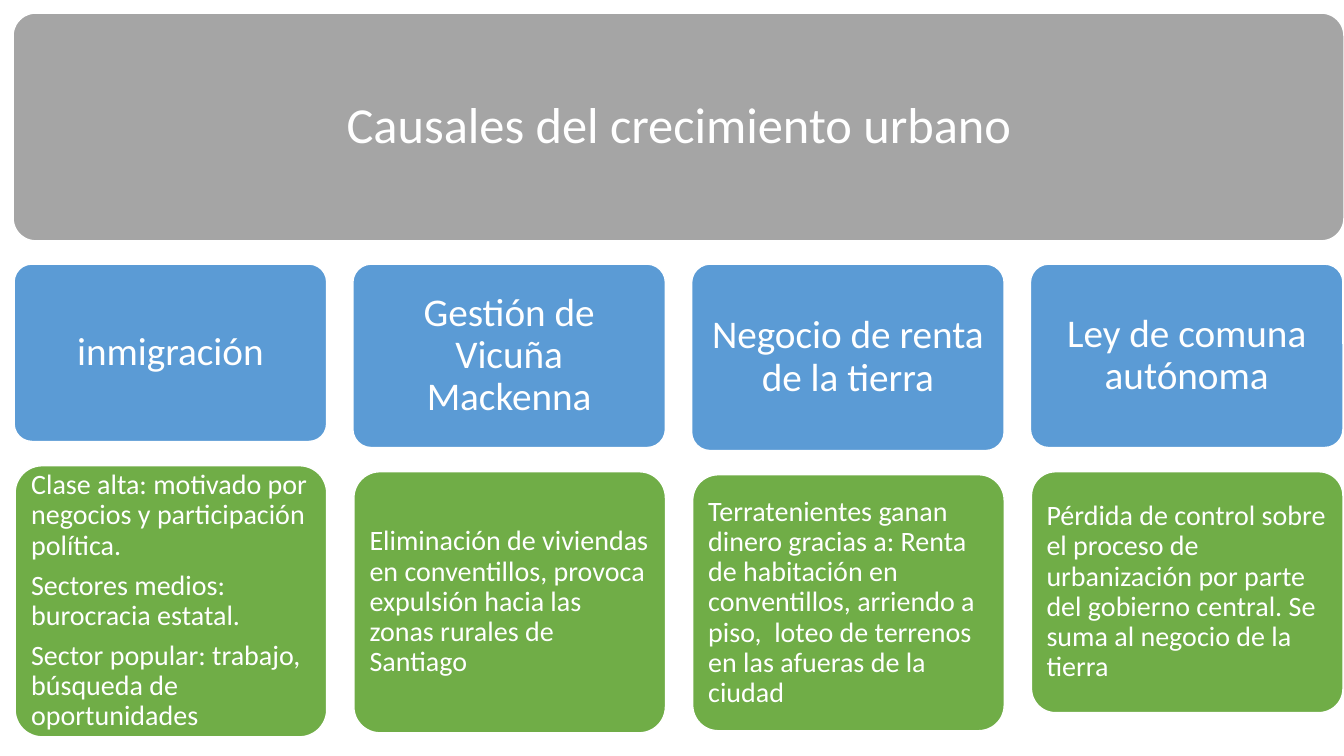
import pptx
import pptx.util
import pptx.dml.color
import pptx.enum.shapes
import pptx.enum.text

PX = 9144
FONT = "Calibri"
WHITE = pptx.dml.color.RGBColor(0xFF, 0xFF, 0xFF)
GRAY = pptx.dml.color.RGBColor(0xA5, 0xA5, 0xA5)
BLUE = pptx.dml.color.RGBColor(0x5B, 0x9B, 0xD5)
GREEN = pptx.dml.color.RGBColor(0x70, 0xAD, 0x47)
LEFT, PITCH, CARD_W = 14, 336, 310
CAUSE_TOP, GAP = 262, 24

TITLE = "Causales del crecimiento urbano"
CAUSES = [
    ("inmigración", 176, 269, [
        "Clase alta: motivado por negocios y participación política.",
        "Sectores medios: burocracia estatal.",
        "Sector popular: trabajo, búsqueda de oportunidades"]),
    ("Gestión de Vicuña Mackenna", 182, 259, [
        "Eliminación de viviendas en conventillos, provoca expulsión "
        "hacia las zonas rurales de Santiago"]),
    ("Negocio de renta de la tierra", 185, 254, [
        "Terratenientes ganan dinero gracias a: Renta de habitación en "
        "conventillos, arriendo a piso,  loteo de terrenos en las afueras "
        "de la ciudad"]),
    ("Ley de comuna autónoma", 182, 239, [
        "Pérdida de control sobre el proceso de urbanización por parte del "
        "gobierno central. Se suma al negocio de la tierra"]),
]


def px(n):
    return pptx.util.Emu(n * PX)


def write(sp, paragraphs, size, align, inset):
    tf = sp.text_frame
    tf.word_wrap = True
    tf.auto_size = pptx.enum.text.MSO_AUTO_SIZE.NONE
    tf.vertical_anchor = pptx.enum.text.MSO_ANCHOR.MIDDLE
    tf.margin_left = tf.margin_right = px(inset)
    tf.margin_top = tf.margin_bottom = px(inset)
    tf.text = "\n".join(paragraphs)
    for p in tf.paragraphs:
        p.alignment = align
        p.line_spacing = 0.9
        p.space_before = pptx.util.Pt(0)
        p.space_after = pptx.util.Pt(size * 0.35)
        p.font.name = FONT
        p.font.size = pptx.util.Pt(size)
        p.font.color.rgb = WHITE


def add_card(s, x, y, w, h, color):
    sp = s.shapes.add_shape(pptx.enum.shapes.MSO_SHAPE.ROUNDED_RECTANGLE,
                            px(x), px(y), px(w), px(h))
    sp.adjustments[0] = 0.1
    sp.shadow.inherit = False
    sp.fill.solid()
    sp.fill.fore_color.rgb = color
    sp.line.color.rgb = WHITE
    sp.line.width = pptx.util.Pt(1)
    return sp


def add_title(s):
    banner = add_card(s, 13, 13, 1320, 226, GRAY)
    title = s.shapes.title
    title.left, title.top, title.width, title.height = map(px, (20, 20, 1307, 213))
    write(title, [TITLE], 36, pptx.enum.text.PP_ALIGN.CENTER, 15)
    title._element.addprevious(banner._element)


def add_cause(s, x, name, name_h, detail_h, details):
    cause = add_card(s, x, CAUSE_TOP, CARD_W, name_h, BLUE)
    write(cause, [name], 28, pptx.enum.text.PP_ALIGN.CENTER, 12)
    detail = add_card(s, x + 1, CAUSE_TOP + name_h + GAP, CARD_W - 1, detail_h, GREEN)
    write(detail, details, 20, pptx.enum.text.PP_ALIGN.LEFT, 8)


def main():
    prs = pptx.Presentation()
    prs.slide_width, prs.slide_height = px(1333), px(750)
    s = prs.slides.add_slide(prs.slide_layouts.get_by_name("Title Only"))
    add_title(s)
    for i, cause in enumerate(CAUSES):
        add_cause(s, LEFT + i * PITCH, *cause)
    prs.save("out.pptx")


if __name__ == "__main__":
    main()
